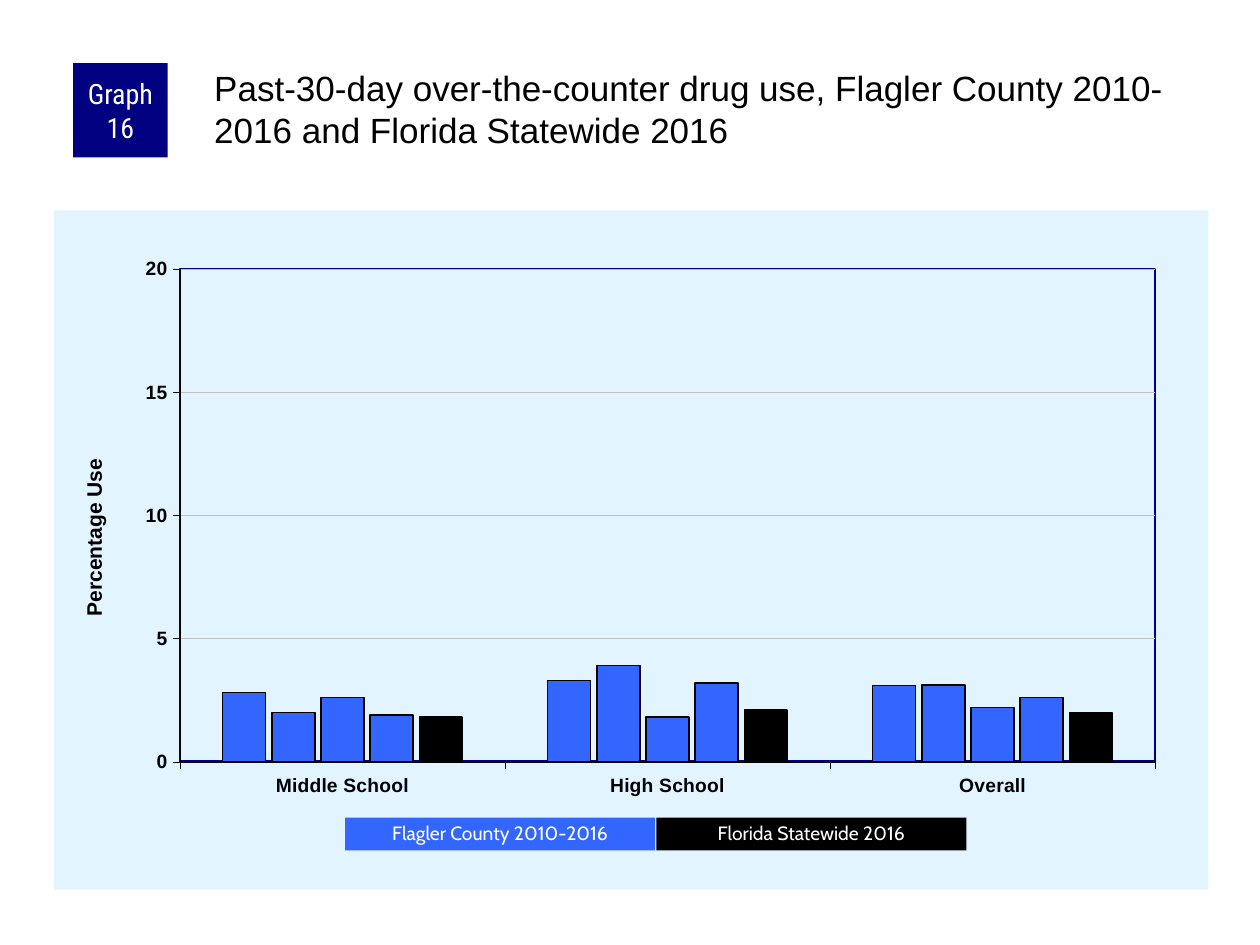
from lxml.etree import SubElement
from pptx import Presentation
from pptx.chart.data import CategoryChartData
from pptx.dml.color import RGBColor
from pptx.enum.chart import XL_CHART_TYPE, XL_TICK_MARK
from pptx.enum.shapes import MSO_SHAPE
from pptx.enum.text import MSO_ANCHOR, PP_ALIGN
from pptx.oxml import parse_xml
from pptx.oxml.ns import nsdecls, qn
from pptx.util import Inches, Pt

NAVY = RGBColor(0x00, 0x00, 0x80)
BLUE = RGBColor(0x33, 0x66, 0xFF)
PALE = RGBColor(0xE1, 0xF4, 0xFF)
GRAY = RGBColor(0xC0, 0xC0, 0xC0)
BLACK = RGBColor(0x00, 0x00, 0x00)
WHITE = RGBColor(0xFF, 0xFF, 0xFF)

GROUPS = ["Middle School", "High School", "Overall"]
SERIES = [
    ((2.8, 3.3, 3.1), BLUE),
    ((2, 3.9, 3.1), BLUE),
    ((2.6, 1.8, 2.2), BLUE),
    ((1.9, 3.2, 2.6), BLUE),
    ((1.8, 2.1, 2), BLACK),
]
LEGEND = [("Flagler County 2010-2016", BLUE), ("Florida Statewide 2016", BLACK)]


def style(font, size, color=BLACK, name="Arial", bold=False):
    font.size, font.name, font.bold = Pt(size), name, bold
    font.color.rgb = color


def write(shape, text, size, color=BLACK, name="Arial", align=PP_ALIGN.LEFT,
          anchor=MSO_ANCHOR.TOP, inset=(0.1, 0.05, 0.1, 0.05), space=None):
    """Put text in a shape; inset is left, top, right, bottom in inches."""
    frame = shape.text_frame
    frame.word_wrap = True
    frame.vertical_anchor = anchor
    (frame.margin_left, frame.margin_top,
     frame.margin_right, frame.margin_bottom) = map(Inches, inset)
    para = frame.paragraphs[0]
    para.alignment, para.line_spacing = align, space
    run = para.add_run()
    run.text = text
    style(run.font, size, color, name)


def add_box(slide, left, top, width, height, fill, text, **look):
    box = slide.shapes.add_shape(MSO_SHAPE.RECTANGLE, Inches(left), Inches(top),
                                 Inches(width), Inches(height))
    box.shadow.inherit = False
    box.fill.solid()
    box.fill.fore_color.rgb = fill
    box.line.fill.background()
    write(box, text, color=WHITE, align=PP_ALIGN.CENTER,
          anchor=MSO_ANCHOR.MIDDLE, **look)


def set_line(line, color, width):
    line.color.rgb, line.width = color, Pt(width)


def set_layout(parent, after, **values):
    """Replace the manual layout of a chart part; after is the tag it follows."""
    old = parent.find(qn("c:layout"))
    if old is not None:
        parent.remove(old)
    layout = parse_xml(f"<c:layout {nsdecls('c')}/>")
    manual = SubElement(layout, qn("c:manualLayout"))
    for tag, value in values.items():
        SubElement(manual, qn(f"c:{tag}")).set("val", str(value))
    if after:
        parent.find(qn(after)).addnext(layout)
    else:
        parent.insert(0, layout)


def area(fill, line):
    return parse_xml(f"<c:spPr {nsdecls('c', 'a')}>{fill}<a:ln w='19050'>{line}</a:ln></c:spPr>")


def solid(color):
    return f"<a:solidFill><a:srgbClr val='{color}'/></a:solidFill>"


def style_axis(axis):
    axis.major_tick_mark = XL_TICK_MARK.OUTSIDE
    axis.minor_tick_mark = XL_TICK_MARK.NONE
    style(axis.tick_labels.font, 11, bold=True)
    set_line(axis.format.line, BLACK, 0.25)


def add_bars(slide):
    data = CategoryChartData()
    data.categories = GROUPS
    for number, (values, _) in enumerate(SERIES, 1):
        data.add_series(f"Series {number}", values)
    chart = slide.shapes.add_chart(
        XL_CHART_TYPE.COLUMN_CLUSTERED, Inches(0.43), Inches(1.67),
        Inches(9.16), Inches(5.39), data).chart
    chart.has_legend = chart.has_title = False
    style(chart.font, 8)
    plot = chart.plots[0]
    plot.vary_by_categories = False
    plot.gap_width, plot.overlap = 200, -15
    for index, (series, (_, color)) in enumerate(zip(plot.series, SERIES)):
        series.format.fill.solid()
        series.format.fill.fore_color.rgb = color
        set_line(series.format.line, BLACK, 1 if index else 0.75)

    scale = chart.value_axis
    for axis in (chart.category_axis, scale):
        style_axis(axis)
    scale.minimum_scale, scale.maximum_scale, scale.major_unit = 0, 20, 5
    scale.has_major_gridlines = True
    set_line(scale.major_gridlines.format.line, GRAY, 0.25)
    scale.has_title = True
    para = scale.axis_title.text_frame.paragraphs[0]
    run = para.add_run()
    run.text = "Percentage Use"
    style(run.font, 12, bold=True)

    root = chart._chartSpace
    title = root.find(".//" + qn("c:valAx") + "/" + qn("c:title"))
    body = title.find(".//" + qn("a:bodyPr"))
    body.set("rot", "-5400000")
    body.set("vert", "horz")
    set_layout(title, "c:tx", xMode="edge", yMode="edge", x=0.02, y=0.36)
    inner = root.find(".//" + qn("c:plotArea"))
    set_layout(inner, None, layoutTarget="inner", xMode="edge", yMode="edge",
               x=0.109, y=0.086, w=0.845, h=0.726)
    inner.append(area("<a:noFill/>", solid(NAVY)))
    root.find(qn("c:chart")).addnext(area(solid(PALE), "<a:noFill/>"))


def main():
    deck = Presentation()
    deck.slide_width, deck.slide_height = Inches(10), Inches(7.5)
    slide = deck.slides.add_slide(deck.slide_layouts[6])
    add_bars(slide)
    add_box(slide, 0.58, 0.5, 0.75, 0.75, NAVY, "Graph 16", size=16,
            name="Roboto Condensed", inset=(0.05, 0, 0.05, 0))
    head = slide.shapes.add_textbox(Inches(1.67), Inches(0.5),
                                    Inches(7.92), Inches(0.83))
    write(head, "Past-30-day over-the-counter drug use, Flagler County "
          "2010-2016 and Florida Statewide 2016", 20, inset=(0.03, 0.03, 0, 0))
    for index, (text, color) in enumerate(LEGEND):
        add_box(slide, 2.74 + index * 2.47, 6.49, 2.46, 0.26, color, text,
                size=11, name="Cabin", space=0.9)
    deck.save("out.pptx")


if __name__ == "__main__":
    main()
